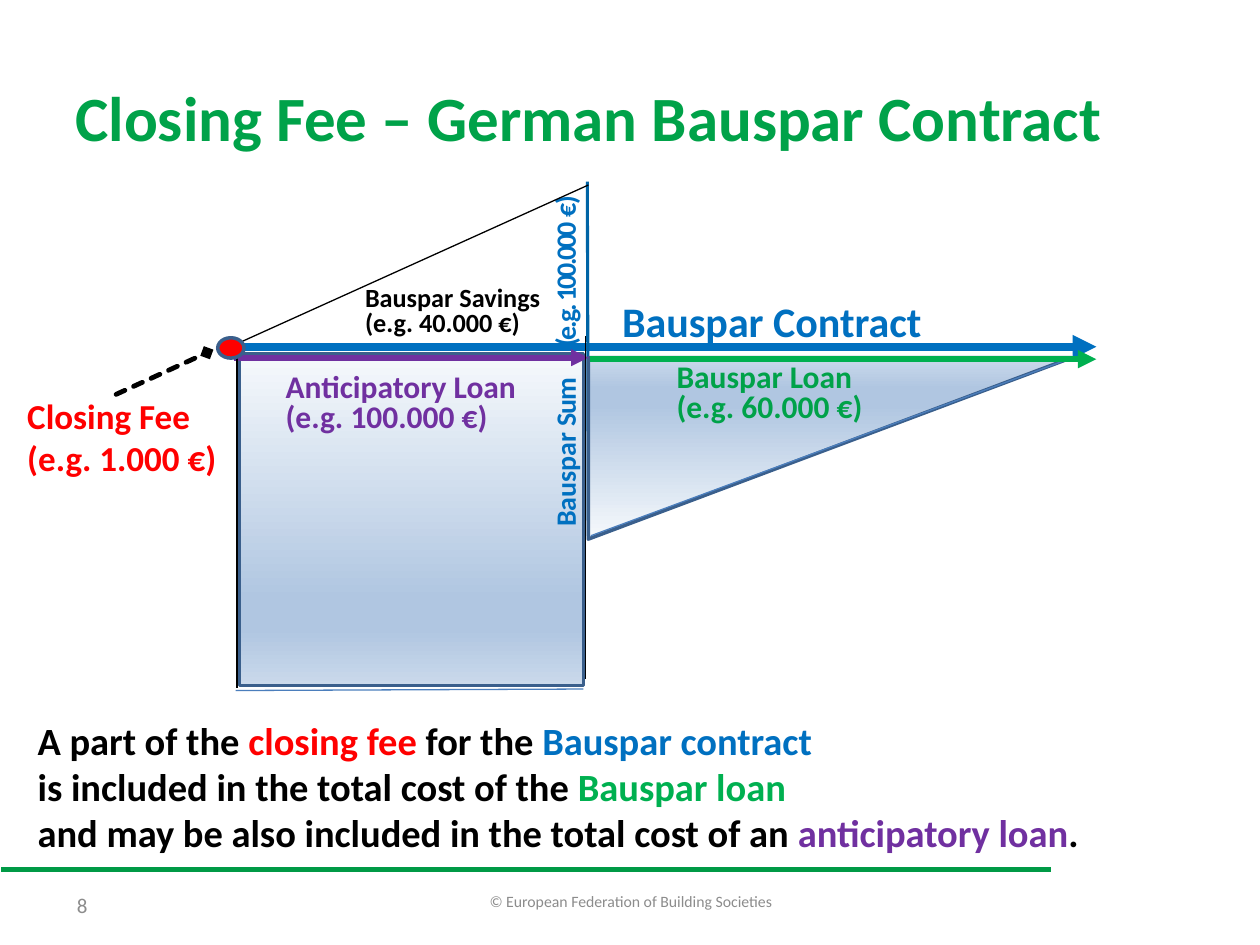
from pptx import Presentation
from pptx.dml.color import RGBColor
from pptx.enum.dml import MSO_LINE
from pptx.enum.shapes import MSO_CONNECTOR, MSO_SHAPE
from pptx.enum.text import MSO_ANCHOR, PP_ALIGN
from pptx.oxml.ns import qn
from pptx.util import Cm, Pt
from lxml import etree

STRAIGHT = MSO_CONNECTOR.STRAIGHT
RECTANGLE, TRIANGLE, OVAL = MSO_SHAPE.RECTANGLE, MSO_SHAPE.RIGHT_TRIANGLE, MSO_SHAPE.OVAL
TOP, MIDDLE = MSO_ANCHOR.TOP, MSO_ANCHOR.MIDDLE
LEFT, CENTER = PP_ALIGN.LEFT, PP_ALIGN.CENTER
SHORT_DASH = MSO_LINE.SQUARE_DOT

FONT = "Calibri"
BLACK = RGBColor(0x00, 0x00, 0x00)
RED = RGBColor(0xFF, 0x00, 0x00)
BLUE = RGBColor(0x00, 0x70, 0xC0)
SUM_BLUE = RGBColor(0x00, 0x64, 0xA5)
EDGE_BLUE = RGBColor(0x3A, 0x5F, 0x8C)
THIN_BLUE = RGBColor(0x4B, 0x7E, 0xBC)
GREEN = RGBColor(0x00, 0xB0, 0x50)
TITLE_GREEN = RGBColor(0x00, 0xA2, 0x49)
RULE_GREEN = RGBColor(0x00, 0x9A, 0x46)
PURPLE = RGBColor(0x70, 0x30, 0xA0)
GREY = RGBColor(0x8C, 0x8C, 0x8C)
LOAN_STOPS = [(0, RGBColor(0xF6, 0xF9, 0xFC)), (74, RGBColor(0xB0, 0xC6, 0xE1)),
              (83, RGBColor(0xB0, 0xC6, 0xE1)), (100, RGBColor(0xCA, 0xD9, 0xEB))]


def add_text(page, box, lines, size, color=BLACK, bold=True, anchor=TOP, align=LEFT, spacing=None):
    """Add a text box; each line is a string or a list of (text, color) spans."""
    label = page.shapes.add_textbox(*(Cm(length) for length in box))
    frame = label.text_frame
    frame.word_wrap = True
    frame.vertical_anchor = anchor
    for number, line in enumerate(lines):
        para = frame.add_paragraph() if number else frame.paragraphs[0]
        para.alignment = align
        if spacing:
            para.line_spacing = spacing
        for text, span_color in [(line, color)] if isinstance(line, str) else line:
            span = para.add_run()
            span.text = text
            span.font.name = FONT
            span.font.size = Pt(size)
            span.font.bold = bold
            span.font.color.rgb = span_color
    return label


def add_line(page, origin, start, end, color, width, head=None, dash=None):
    """Add a straight line between two points measured from the origin."""
    points = [Cm(base + offset) for point in (start, end) for base, offset in zip(origin, point)]
    line = page.shapes.add_connector(STRAIGHT, *points)
    line.line.color.rgb = color
    line.line.width = Pt(width)
    properties = line._element.spPr
    outline = properties.find(qn("a:ln"))
    if dash:
        line.line.dash_style = dash
        outline.set("cap", "rnd")
    if head:
        etree.SubElement(outline, qn("a:tailEnd"), type=head)
    etree.SubElement(properties, qn("a:effectLst"))


def add_area(page, kind, box):
    """Add an outlined preset shape."""
    area = page.shapes.add_shape(kind, *(Cm(length) for length in box))
    area.shadow.inherit = False
    area.line.color.rgb = EDGE_BLUE
    area.line.width = Pt(2)
    return area


def fill_loan(area):
    """Fill a loan area with the vertical blue gradient."""
    area.fill.gradient()
    area.fill.gradient_angle = 270
    stops = area._element.spPr.find(".//" + qn("a:gsLst"))
    for stop in list(stops):
        stops.remove(stop)
    for position, color in LOAN_STOPS:
        stop = etree.SubElement(stops, qn("a:gs"), pos=str(position * 1000))
        etree.SubElement(stop, qn("a:srgbClr"), val=str(color))


def add_sum_label(page, box):
    """Add the upright Bauspar sum label, its amount set off by a tab."""
    spans = [("Bauspar ", 0), ("Sum", -80), ("\t", 0), ("(e.g. 100.000 ", -120), ("€)", -80)]
    label = add_text(page, box, [[(text, BLUE) for text, _ in spans]], 16)
    label.rotation = 270
    para = label.text_frame.paragraphs[0]
    tabs = etree.SubElement(para._p.get_or_add_pPr(), qn("a:tabLst"))
    etree.SubElement(tabs, qn("a:tab"), pos=str(Cm(3.63)), algn="l")
    for span, (_, tracking) in zip(para.runs, spans):
        span.font._element.set("spc", str(tracking))


def add_diagram(page, left, top, width, height):
    """Draw the contract timeline with savings, loans and closing fee."""
    origin = (left, top)
    axis, loan_top, middle = 3.33, 3.55, 7.44

    def label(x, y, w, h, lines, size, color, spacing=None):
        add_text(page, (left + x, top + y, w, h), lines, size, color, spacing=spacing)

    def line(start, end, color, weight, **style):
        add_line(page, origin, start, end, color, weight, **style)

    label(-4.12, 4.16, 8.76, 1.96, ["Closing Fee", "(e.g. 1.000 €)"], 20, RED)
    label(7.87, 2.18, 9.68, 1.27, ["Bauspar Contract"], 24, BLUE)
    line((0, axis), (width, axis), BLUE, 4.5, head="triangle")
    line((-2.08, 4.29), (-0.25, 3.45), BLACK, 2.75, head="diamond", dash=SHORT_DASH)

    fill_loan(add_area(page, RECTANGLE, (left + 0.41, top + 3.48, 6.93, 6.68)))
    add_sum_label(page, (left + 2.51, top + 2.28, 8.92, 0.94))
    line((7.42, 0), (middle, 7.14), SUM_BLUE, 1.75)
    repayment = add_area(page, TRIANGLE, (left + middle, top + loan_top, 9.75, 3.66))
    fill_loan(repayment)
    repayment._element.spPr.find(qn("a:xfrm")).set("flipV", "1")

    line((0.18, 3.35), (middle, 0.07), BLACK, 0.75)
    label(8.97, loan_top, 7.85, 1.5, ["Bauspar Loan", "(e.g. 60.000 €)"], 18, TITLE_GREEN, 0.8)
    line((7.49, 7.14), (17.2, loan_top), THIN_BLUE, 0.75)
    label(2.69, 2, 9.68, 1.3, ["Bauspar Savings", "(e.g. 40.000 €)"], 15, BLACK, 0.8)
    line((7.47, 3.58), (width, 3.58), GREEN, 3.5, head="triangle")
    line((0.3, loan_top), (middle, loan_top), PURPLE, 3.25, head="triangle")
    label(1.09, 3.76, 7.85, 1.5, ["Anticipatory Loan", "(e.g. 100.000 €)"], 18, PURPLE, 0.8)

    line((0.36, 3.3), (0.36, 10.21), BLACK, 0.75)
    line((7.39, 3.12), (7.39, 10.03), BLACK, 0.75)
    line((0.33, height), (7.34, height - 0.03), THIN_BLUE, 0.75)
    fee = add_area(page, OVAL, (left - 0.03, top + 3.15, 0.53, 0.41))
    fee.fill.solid()
    fee.fill.fore_color.rgb = RED


def add_summary(page, box):
    """Write the closing statement with its coloured terms."""
    add_text(page, box, [
        [("A part of the ", BLACK), ("closing fee ", RED), ("for the ", BLACK), ("Bauspar contract", BLUE)],
        [("is included in the total cost of the ", BLACK), ("Bauspar loan", GREEN)],
        [("and may be also included in the total cost of an ", BLACK),
         ("anticipatory loan", PURPLE), (".", BLACK)],
    ], 22)


def add_footer(page, left, top, width, height):
    """Draw the green rule with the copyright line and page number below."""
    add_line(page, (left, top), (0, 0), (width, 0), RULE_GREEN, 3)
    add_text(page, (left + 8.66, top + 0.12, 8.05, height), ["© European Federation of Building Societies"],
             9, GREY, bold=False, anchor=MIDDLE, align=CENTER)
    add_text(page, (left + 1.27, top + 0.2, 5.92, height), ["8"], 12, GREY, bold=False, anchor=MIDDLE)


def main():
    """Build the slide and save the deck."""
    deck = Presentation()
    deck.slide_width, deck.slide_height = Cm(25.4), Cm(19.05)
    page = deck.slides.add_slide(deck.slide_layouts[6])
    add_footer(page, 0.03, 17.53, 21.15, 1.02)
    add_text(page, (1.27, 0.76, 22.86, 3.18), ["Closing Fee – German Bauspar Contract"],
             36, TITLE_GREEN, anchor=MIDDLE)
    add_summary(page, (0.51, 14.33, 23.27, 3.94))
    add_diagram(page, 4.42, 3.66, 17.68, 10.26)
    deck.save("out.pptx")


if __name__ == "__main__":
    main()
